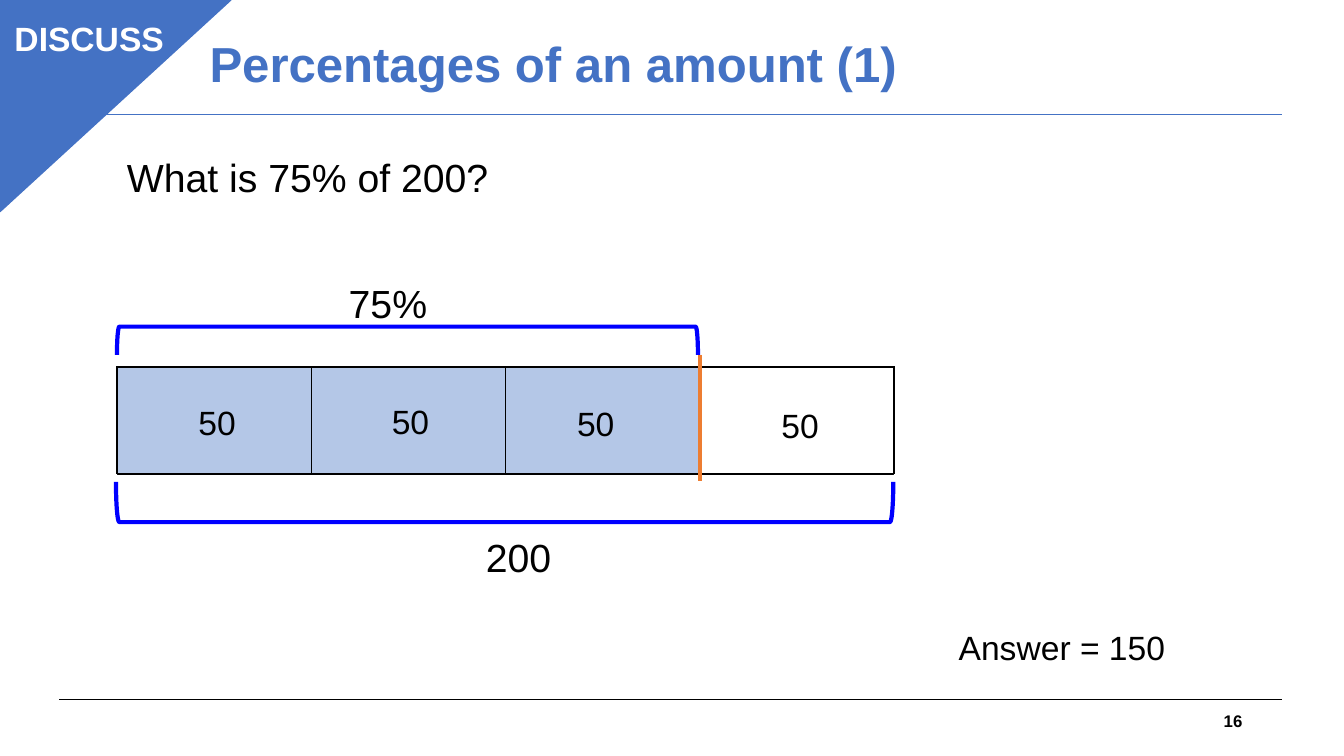
import dataclasses

import pptx
import pptx.dml.color
import pptx.enum.shapes
import pptx.enum.text
import pptx.oxml
import pptx.oxml.ns
import pptx.util
from lxml import etree

Inches = pptx.util.Inches
Pt = pptx.util.Pt
SHAPES = pptx.enum.shapes.MSO_SHAPE
ALIGN = pptx.enum.text.PP_ALIGN
ANCHOR = pptx.enum.text.MSO_ANCHOR


@dataclasses.dataclass(frozen=True)
class Theme:
    font: str = "Arial"
    accent: str = "4472C4"
    ink: str = "000000"
    paper: str = "FFFFFF"
    shaded: str = "B4C7E7"
    bracket: str = "0000FF"
    marker: str = "ED7D31"
    title_size: float = 35.1
    body_size: float = 28
    label_size: float = 24
    number_size: float = 12


@dataclasses.dataclass(frozen=True)
class Box:
    left: float
    top: float
    width: float
    height: float

    def area(self, dx, dy, width, height):
        return Box(self.left + dx, self.top + dy, width, height)

    def lengths(self):
        return [Inches(n) for n in (self.left, self.top, self.width, self.height)]


THEME = Theme()
SLIDE = Box(0, 0, 13.33, 7.5)


def colour(code):
    return pptx.dml.color.RGBColor.from_string(code)


def add_text(page, box, words, size, ink=THEME.ink, bold=False,
             align=ALIGN.LEFT, anchor=ANCHOR.TOP, spacing=None):
    frame = page.shapes.add_textbox(*box.lengths()).text_frame
    frame.word_wrap = True
    frame.vertical_anchor = anchor
    frame.text = words
    para = frame.paragraphs[0]
    para.alignment = align
    if spacing:
        para.line_spacing = spacing
    font = para.runs[0].font
    font.name, font.size, font.bold = THEME.font, Pt(size), bold
    font.color.rgb = colour(ink)


def add_line(page, start, end, ink, weight):
    line = page.shapes.add_connector(
        pptx.enum.shapes.MSO_CONNECTOR.STRAIGHT,
        *[Inches(n) for n in (*start, *end)])
    line.line.color.rgb = colour(ink)
    line.line.width = Pt(weight)
    etree.SubElement(line.element.spPr, pptx.oxml.ns.qn("a:effectLst"))


def add_outline(page, kind, box, ink, weight, fill=None):
    shape = page.shapes.add_shape(kind, *box.lengths())
    shape.shadow.inherit = False
    if fill:
        shape.fill.solid()
        shape.fill.fore_color.rgb = colour(fill)
    else:
        shape.fill.background()
    shape.line.color.rgb = colour(ink)
    shape.line.width = Pt(weight)
    return shape


def add_bracket(page, box, turn):
    """Lay a bracket on its side so that it covers the given box."""
    middle_x = box.left + box.width / 2
    middle_y = box.top + box.height / 2
    upright = Box(middle_x - box.height / 2, middle_y - box.width / 2,
                  box.height, box.width)
    shape = add_outline(page, SHAPES.LEFT_BRACKET, upright, THEME.bracket, 3)
    shape.adjustments[0] = 0.083
    shape.rotation = turn


def add_borders(cell, ink, weight):
    properties = cell._tc.get_or_add_tcPr()
    for side in ("lnL", "lnR", "lnT", "lnB"):
        properties.append(pptx.oxml.parse_xml(
            f'<a:{side} {pptx.oxml.ns.nsdecls("a")} w="{Pt(weight)}">'
            f'<a:solidFill><a:srgbClr val="{ink}"/></a:solidFill></a:{side}>'))


def build_frame(page, box, title, number):
    # Rules above and below the content
    for height, ink in ((6.94, THEME.ink), (1.14, THEME.accent)):
        add_line(page, (box.left + 0.59, box.top + height),
                 (box.left + 12.72, box.top + height), ink, 0.75)
    add_text(page, box.area(1.98, 0.11, 8.11, 1.11), title, THEME.title_size,
             THEME.accent, True, anchor=ANCHOR.MIDDLE, spacing=0.9)
    add_text(page, box.area(11.93, 6.95, 0.49, 0.4), number, THEME.number_size,
             bold=True, align=ALIGN.RIGHT, anchor=ANCHOR.MIDDLE)


def build_corner(page, box, words):
    corner = add_outline(page, SHAPES.ISOSCELES_TRIANGLE, box,
                         THEME.accent, 1, THEME.accent)
    corner.adjustments[0] = 0
    corner.element.spPr.xfrm.set("flipV", "1")
    add_text(page, box.area(-0.1, 0.13, 1.97, 0.5), words, THEME.label_size,
             THEME.paper, True, ALIGN.CENTER)


def build_bar_model(page, box, value, count, shaded, share, total):
    step = box.width / count
    split = box.left + shaded * step

    # Brackets for the whole and for the share
    add_bracket(page, box.area(-0.01, 1.14, box.width, 0.4), 270)
    add_bracket(page, box.area(0, -0.4, shaded * step - 0.02, 0.28), 90)
    add_text(page, box.area(2.2, -0.92, 1.85, 0.57), share, THEME.body_size)
    add_text(page, box.area(3.56, 1.6, 1.19, 0.57), total, THEME.body_size)

    # Bar cut into equal cells
    add_outline(page, SHAPES.RECTANGLE, box.area(0, -0.01, 7.7, 1.08),
                THEME.ink, 0.5)
    table = page.shapes.add_table(1, count, *box.lengths()).table
    table.first_row = table.horz_banding = False
    for index, column in enumerate(table.columns):
        column.width = Inches(step)
        cell = table.cell(0, index)
        add_borders(cell, THEME.ink, 1)
        if index < shaded:
            cell.fill.solid()
            cell.fill.fore_color.rgb = colour(THEME.shaded)
        else:
            cell.fill.background()

    # Value of each cell, nudged within it
    nudges = ((0.71, 0.3), (0.7, 0.29), (0.61, 0.31), (0.71, 0.33))
    for index, (dx, dy) in enumerate(nudges):
        add_text(page, box.area(index * step + dx, dy, 0.77, 0.5),
                 value, THEME.label_size)

    # Marker at the end of the share
    add_line(page, (split, box.top - 0.12), (split, box.top + 1.13),
             THEME.marker, 2.25)


def main():
    deck = pptx.Presentation()
    deck.slide_width, deck.slide_height = Inches(SLIDE.width), Inches(SLIDE.height)
    page = deck.slides.add_slide(deck.slide_layouts[6])

    build_frame(page, SLIDE, "Percentages of an amount (1)", "16")
    build_corner(page, SLIDE.area(0, 0, 2.29, 2.1), "DISCUSS")
    add_text(page, SLIDE.area(1.16, 1.47, 8.78, 0.57),
             "What is 75% of 200?", THEME.body_size)
    build_bar_model(page, SLIDE.area(1.16, 3.64, 7.71, 1.06),
                    value="50", count=4, shaded=3, share="75%", total="200")
    add_text(page, SLIDE.area(9.41, 6.17, 3.74, 0.5),
             "Answer = 150", THEME.label_size)
    deck.save("out.pptx")


if __name__ == "__main__":
    main()
